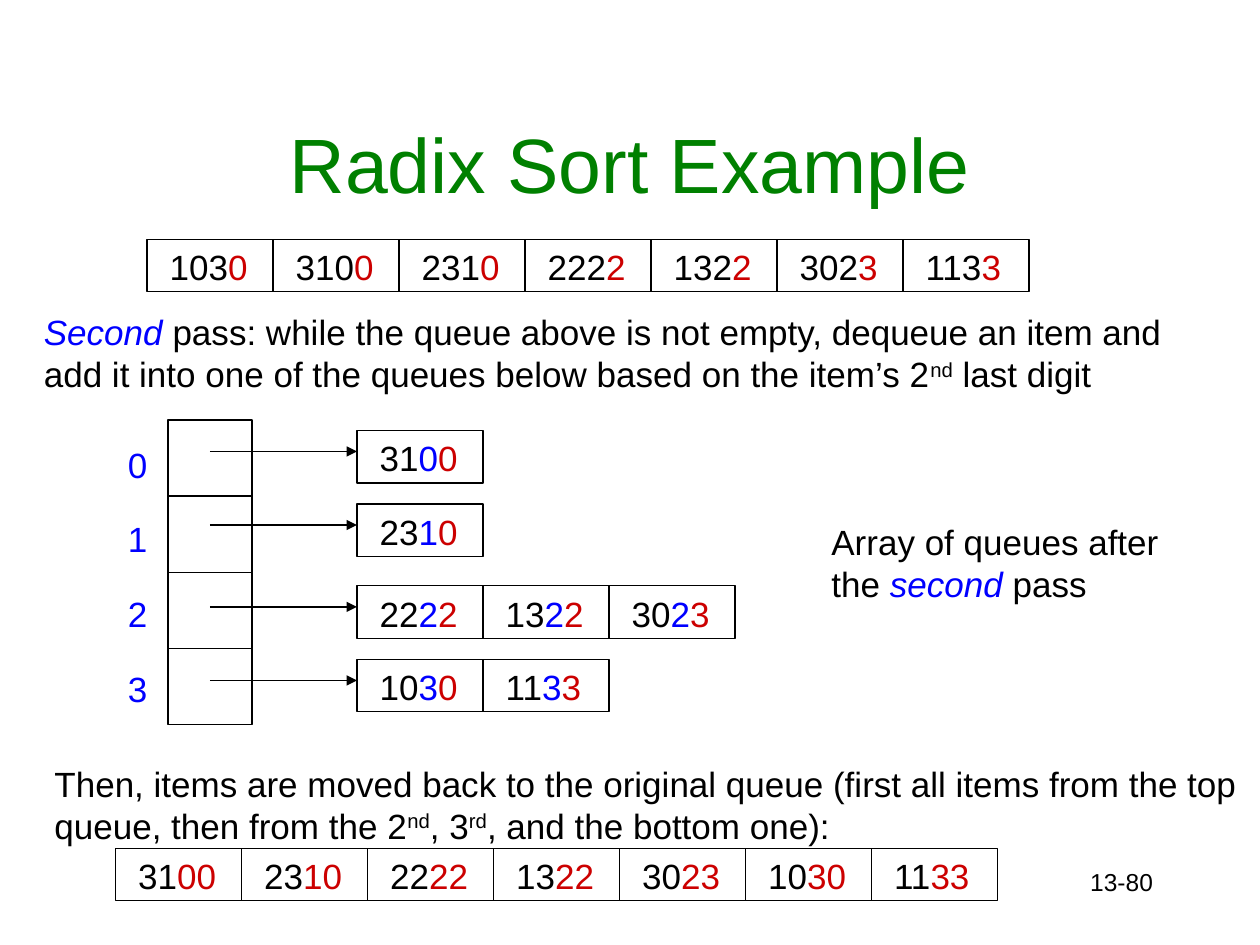
from dataclasses import dataclass
from typing import Any

from lxml import etree
from pptx import Presentation, util as u
from pptx.dml.color import RGBColor
from pptx.enum import shapes, text
from pptx.oxml import ns

BLACK = RGBColor(0x00, 0x00, 0x00)
GREEN = RGBColor(0x00, 0x80, 0x00)
BLUE = RGBColor(0x00, 0x00, 0xFF)
RED = RGBColor(0xCC, 0x00, 0x00)

UNIT = u.Inches(1) / 12
CELL_W, CELL_H = 12, 5
BIN_LEFT, BIN_TOP, BIN_W, BIN_H = 16, 40, 8, 7.25
QUEUE_LEFT = 34

PLAIN = {}
EMPHASIS = {"color": BLUE, "italic": True}
RAISED = {"raised": True}


@dataclass
class QueueSlide:
    slide: Any
    font: str = "Arial"
    size: float = 20
    line_width: float = 0.75

    def area(self, *grid):
        return [u.Emu(round(value * UNIT)) for value in grid]

    def fill_text(self, shape, runs, size=None, align=text.PP_ALIGN.LEFT,
                  anchor=text.MSO_ANCHOR.TOP, inset=0.1):
        frame = shape.text_frame
        layout = {"word_wrap": True, "vertical_anchor": anchor,
                  "margin_left": u.Inches(inset)}
        for name, value in layout.items():
            setattr(frame, name, value)
        paragraph = frame.paragraphs[0]
        paragraph.alignment = align
        for words, style in runs:
            run = paragraph.add_run()
            run.text = words
            look = {"name": self.font, "size": u.Pt(size or self.size),
                    "italic": style.get("italic", False)}
            for name, value in look.items():
                setattr(run.font, name, value)
            run.font.color.rgb = style.get("color", BLACK)
            if style.get("raised"):
                run.font._element.set("baseline", "30000")

    def title(self, words, *grid):
        heading = self.slide.shapes.title
        heading.left, heading.top, heading.width, heading.height = self.area(*grid)
        self.fill_text(heading, [(words, {"color": GREEN})], 44,
                       text.PP_ALIGN.CENTER, text.MSO_ANCHOR.MIDDLE)

    def note(self, runs, *grid, **style):
        self.fill_text(self.slide.shapes.add_textbox(*self.area(*grid)), runs, **style)

    def box(self, *grid):
        outline = self.slide.shapes.add_shape(
            shapes.MSO_SHAPE.RECTANGLE, *self.area(*grid))
        outline.shadow.inherit = False
        outline.fill.background()
        outline.line.color.rgb = BLACK
        outline.line.width = u.Pt(self.line_width)
        return outline

    def queue(self, items, left, top, colors):
        for place, item in enumerate(items):
            cell = self.box(left + place * CELL_W, top, CELL_W, CELL_H)
            start = len(item) - len(colors)
            runs = [(item[:start], PLAIN)]
            runs += [(digit, {"color": color})
                     for digit, color in zip(item[start:], colors)]
            self.fill_text(cell, runs, inset=0.18)

    def arrow(self, *grid):
        pointer = self.slide.shapes.add_connector(
            shapes.MSO_CONNECTOR.STRAIGHT, *self.area(*grid))
        pointer.line.color.rgb = BLACK
        pointer.line.width = u.Pt(self.line_width)
        head = etree.SubElement(pointer.line._get_or_add_ln(), ns.qn("a:tailEnd"))
        head.set("type", "triangle")
        etree.SubElement(pointer._element.spPr, ns.qn("a:effectLst"))


def main():
    deck = Presentation()
    deck.slide_width, deck.slide_height = u.Inches(10), u.Inches(7.5)
    page = QueueSlide(deck.slides.add_slide(deck.slide_layouts[5]))

    page.title("Radix Sort Example", 9, 8, 102, 15)
    page.queue(["1030", "3100", "2310", "2222", "1322", "3023", "1133"],
               14, 22.8, [RED])
    page.note([("Second", EMPHASIS),
               (" pass: while the queue above is not empty, dequeue an item and "
                "add it into one of the queues below based on the item’s 2", PLAIN),
               ("nd", RAISED), (" last digit", PLAIN)], 3, 29, 114, 9.25)

    digit_queues = [(41, ["3100"]), (48, ["2310"]),
                    (55.8, ["2222", "1322", "3023"]), (62.8, ["1030", "1133"])]
    for digit, (top, items) in enumerate(digit_queues):
        page.box(BIN_LEFT, BIN_TOP + digit * BIN_H, BIN_W, BIN_H)
        page.note([(str(digit), {"color": BLUE})], 11, 41.6 + digit * 7.12, 5, 5.2)
        page.queue(items, QUEUE_LEFT, top, [BLUE, RED])
        page.arrow(BIN_LEFT + BIN_W / 2, top + 2, QUEUE_LEFT, top + 2)

    page.note([("Array of queues after the ", PLAIN), ("second", EMPHASIS),
               (" pass", PLAIN)], 78, 49, 37, 9.25)
    page.note([("Then, items are moved back to the original queue (first all items "
                "from the top queue, then from the 2", PLAIN), ("nd", RAISED),
               (", 3", PLAIN), ("rd", RAISED), (", and the bottom one):", PLAIN)],
              4, 72, 116, 9.25)
    page.queue(["3100", "2310", "2222", "1322", "3023", "1030", "1133"],
               11, 80.8, [RED, RED])
    page.note([("13-80", PLAIN)], 86, 82, 25, 6, size=14,
              align=text.PP_ALIGN.RIGHT)
    deck.save("out.pptx")


if __name__ == "__main__":
    main()
